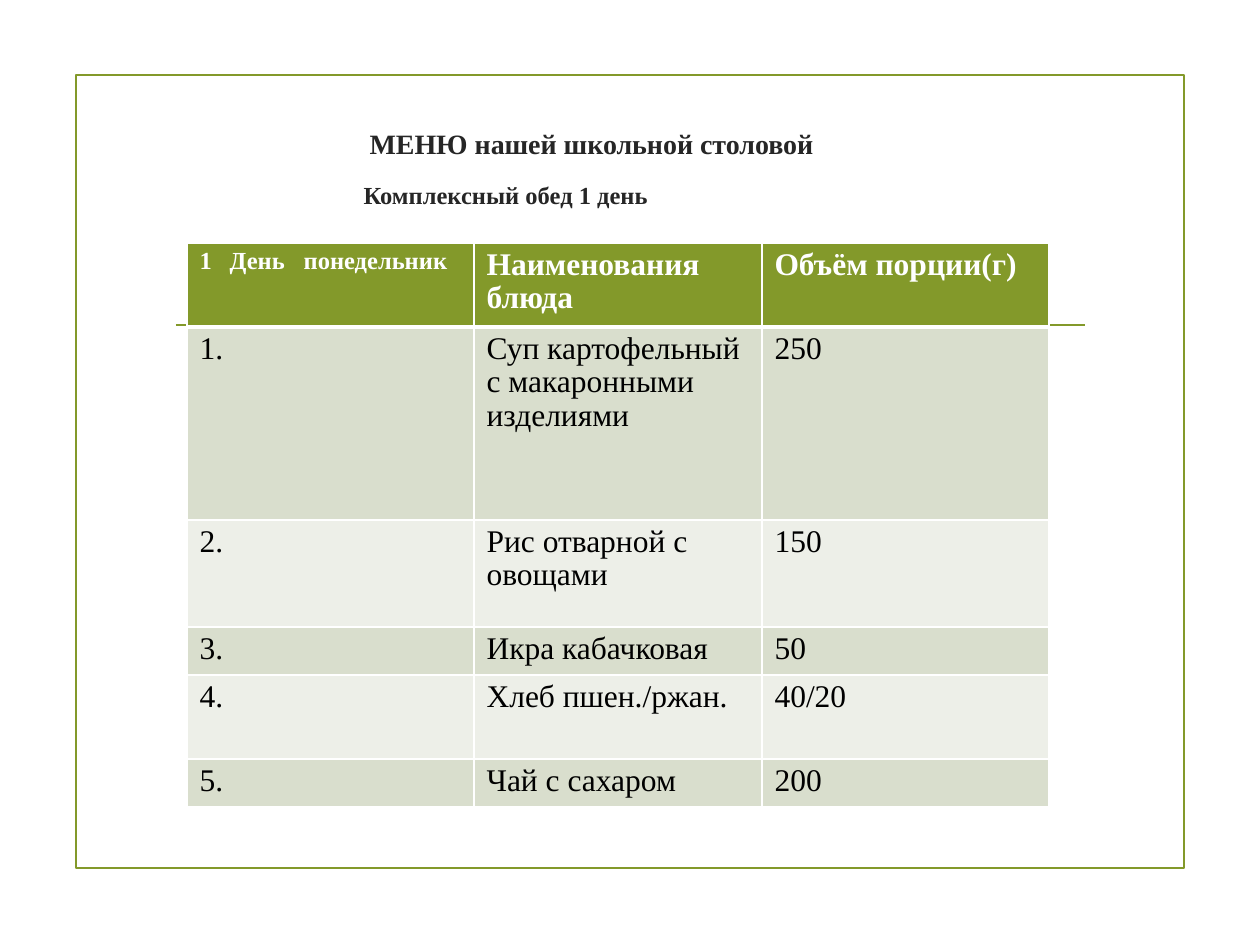
from lxml.etree import SubElement
from pptx import Presentation
from pptx.dml.color import RGBColor
from pptx.enum.shapes import MSO_CONNECTOR as Connector, MSO_SHAPE as Shape
from pptx.enum.text import MSO_ANCHOR as Anchor, MSO_AUTO_SIZE as AutoSize
from pptx.oxml.ns import qn
from pptx.util import Emu, Pt

FONT = "Times New Roman"
GREEN, WHITE, BLACK, DARK = "83992A", "FFFFFF", "000000", "262626"
BANDS = ("D9DECD", "EDEFE8")
HEADINGS = [("МЕНЮ нашей школьной столовой", 16, 195, 0),
            ("Комплексный обед 1 день", 14, 189, 11)]
MENU = [("1\tДень\tпонедельник", "Наименования блюда", "Объём порции(г)"),
        ("1.", "Суп картофельный с макаронными изделиями", "250"),
        ("2.", "Рис отварной с овощами", "150"),
        ("3.", "Икра кабачковая", "50"),
        ("4.", "Хлеб пшен./ржан.", "40/20"),
        ("5.", "Чай с сахаром", "200")]
COLUMN_WIDTHS = (287, 288, 287)
ROW_HEIGHTS = (84, 193, 107, 48, 84, 48)
DAY_TABS = (30, 104)


def px(length):
    """Turn pixels into EMU."""
    return Emu(round(length * 914400 / 126))


def color(value):
    """Turn a hex string into a colour."""
    return RGBColor.from_string(value)


def add_span(para, text, size, ink, bold):
    """Add one formatted run to a paragraph."""
    span = para.add_run()
    span.text = text
    span.font.name = FONT
    span.font.size = Pt(size)
    span.font.bold = bold
    span.font.color.rgb = color(ink)


def add_frame(page, left, top, width, height):
    """Draw the green frame and the rule inside it."""
    frame = page.shapes.add_shape(Shape.RECTANGLE, px(left), px(top), px(width), px(height))
    frame.shadow.inherit = False
    frame.fill.background()
    rule_top = px(top + 250)
    rule = page.shapes.add_connector(
        Connector.STRAIGHT, px(left + 100), rule_top, px(left + 1009), rule_top)
    SubElement(rule._element.spPr, qn("a:effectLst"))
    for outline in (frame.line, rule.line):
        outline.color.rgb = color(GREEN)
        outline.width = Pt(1.25)


def add_headings(page, left, top, width, height):
    """Put the two heading lines into the body placeholder."""
    box = page.placeholders[1]
    box.left, box.top, box.width, box.height = px(left), px(top), px(width), px(height)
    frame = box.text_frame
    frame.word_wrap = True
    frame.auto_size = AutoSize.NONE
    frame.vertical_anchor = Anchor.TOP
    frame.margin_top = px(9)
    for index, (text, size, indent, before) in enumerate(HEADINGS):
        para = frame.add_paragraph() if index else frame.paragraphs[0]
        para.space_before = Pt(before)
        props = para._p.get_or_add_pPr()
        props.set("marL", str(px(indent)))
        props.set("indent", "0")
        SubElement(props, qn("a:buNone"))
        add_span(para, text, size, DARK, True)


def style_cell(cell, fill, top_width, bottom_width):
    """Give a cell its white borders and its fill."""
    props = cell._tc.get_or_add_tcPr()
    borders = {"lnL": 1, "lnR": 1, "lnT": top_width, "lnB": bottom_width}
    for side, width in borders.items():
        border = SubElement(props, qn(f"a:{side}"), w=str(Pt(width)))
        SubElement(SubElement(border, qn("a:solidFill")), qn("a:srgbClr"), val=WHITE)
    cell.fill.solid()
    cell.fill.fore_color.rgb = color(fill)


def add_menu(page, left, top):
    """Build the menu table with a header and banded rows."""
    table = page.shapes.add_table(
        len(MENU), len(COLUMN_WIDTHS), px(left), px(top),
        px(sum(COLUMN_WIDTHS)), px(sum(ROW_HEIGHTS))).table
    for column, width in zip(table.columns, COLUMN_WIDTHS):
        column.width = px(width)
    for number, (row, height, texts) in enumerate(zip(table.rows, ROW_HEIGHTS, MENU)):
        row.height = px(height)
        header = number == 0
        fill = GREEN if header else BANDS[(number - 1) % 2]
        for cell, text in zip(row.cells, texts):
            style_cell(cell, fill, 3 if number == 1 else 1, 3 if header else 1)
            para = cell.text_frame.paragraphs[0]
            para.line_spacing = 0.95
            tabbed = "\t" in text
            if tabbed:
                stops = SubElement(para._p.get_or_add_pPr(), qn("a:tabLst"))
                for stop in DAY_TABS:
                    SubElement(stops, qn("a:tab"), pos=str(px(stop)), algn="l")
            add_span(para, text, 14 if tabbed else 18, WHITE if header else BLACK, header)


def main():
    """Build the menu slide and save it."""
    deck = Presentation()
    deck.slide_width, deck.slide_height = px(1260), px(945)
    page = deck.slides.add_slide(deck.slide_layouts[1])
    title = page.shapes.title._element
    title.getparent().remove(title)
    add_frame(page, 76, 75, 1108, 793)
    add_headings(page, 162, 118, 937, 699)
    add_menu(page, 187, 243)
    deck.save("out.pptx")


if __name__ == "__main__":
    main()
